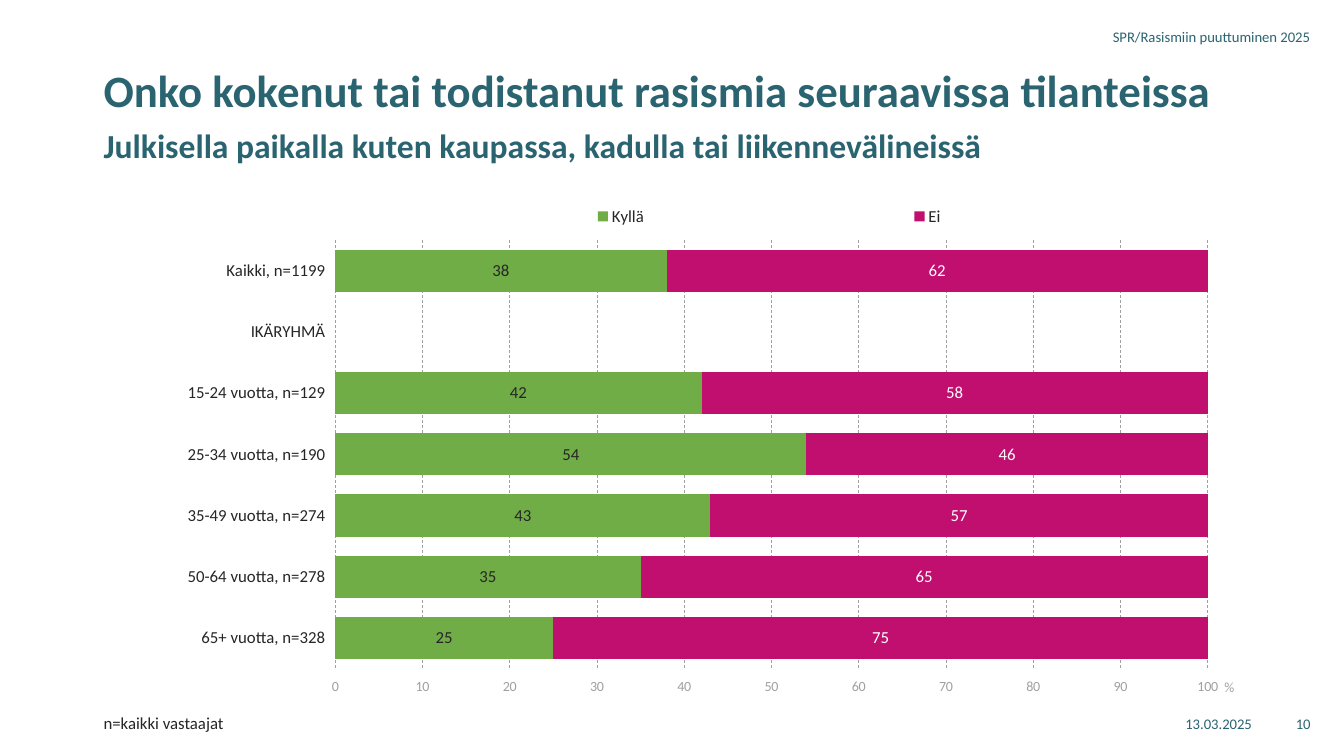
from lxml import etree
from pptx import Presentation
from pptx.chart.data import CategoryChartData
from pptx.dml.color import RGBColor
from pptx.enum.chart import (XL_CHART_TYPE, XL_LABEL_POSITION, XL_LEGEND_POSITION,
                             XL_TICK_LABEL_POSITION, XL_TICK_MARK)
from pptx.enum.dml import MSO_LINE
from pptx.enum.text import MSO_ANCHOR, PP_ALIGN
from pptx.oxml.ns import qn
from pptx.util import Cm, Pt

BAR_STACKED = XL_CHART_TYPE.BAR_STACKED
NO_TICKS = XL_TICK_MARK.NONE
LABELS_LOW, LABELS_HIGH = XL_TICK_LABEL_POSITION.LOW, XL_TICK_LABEL_POSITION.HIGH
LEGEND_TOP = XL_LEGEND_POSITION.TOP
LABEL_CENTER = XL_LABEL_POSITION.CENTER
DASH = MSO_LINE.DASH
TOP, MIDDLE = MSO_ANCHOR.TOP, MSO_ANCHOR.MIDDLE
LEFT, RIGHT = PP_ALIGN.LEFT, PP_ALIGN.RIGHT

FONT = "Calibri"
TEAL, DARK, GREY, WHITE = "2A6471", "262626", "A0A0A0", "FFFFFF"
MARGIN, CONTENT_WIDTH = 2.36, 29.13
FOOTER_TOP, SMALL_HEIGHT = 17.73, 1.02

CATEGORIES = ["Kaikki, n=1199", "IKÄRYHMÄ", "15-24 vuotta, n=129", "25-34 vuotta, n=190",
              "35-49 vuotta, n=274", "50-64 vuotta, n=278", "65+ vuotta, n=328"]
# name, values, bar colour, label colour
SERIES = [("Kyllä", [38, None, 42, 54, 43, 35, 25], "70AD47", DARK),
          ("Ei", [62, None, 58, 46, 57, 65, 75], "C10F70", WHITE)]


def color(hex_string):
    return RGBColor.from_string(hex_string)


def style_font(font, size, hex_color, bold=False):
    font.name = FONT
    font.size = Pt(size)
    font.bold = bold
    font.color.rgb = color(hex_color)


def add_text(slide, box, text, size, hex_color, align=LEFT, anchor=MIDDLE, bold=False):
    """Add a one-paragraph text box and return its paragraph."""
    frame = slide.shapes.add_textbox(*(Cm(length) for length in box)).text_frame
    frame.word_wrap = True
    frame.vertical_anchor = anchor
    paragraph = frame.paragraphs[0]
    paragraph.alignment = align
    paragraph.add_run().text = text
    style_font(paragraph.font, size, hex_color, bold)
    return paragraph


def add_heading(slide, box, title, subtitle):
    paragraph = add_text(slide, box, title, 32, TEAL, anchor=TOP, bold=True)
    paragraph.line_spacing = Pt(35)
    paragraph.add_line_break()
    run = paragraph.add_run()
    run.text = subtitle
    run.font.size = Pt(24)


def place_part(part, index, **settings):
    """Give a chart part a manual layout, as fractions of the chart."""
    for old_layout in part.findall(qn("c:layout")):
        part.remove(old_layout)
    layout = etree.Element(qn("c:layout"))
    manual = etree.SubElement(layout, qn("c:manualLayout"))
    for name, value in settings.items():
        etree.SubElement(manual, qn(f"c:{name}")).set("val", str(value))
    part.insert(index, layout)


def style_axes(chart):
    """Style both axes; the reversed categories put the high end at the bottom."""
    category_axis, value_axis = chart.category_axis, chart.value_axis
    for axis, size, hex_color, label_position in ((category_axis, 12, DARK, LABELS_LOW),
                                                  (value_axis, 10, GREY, LABELS_HIGH)):
        axis.major_tick_mark = axis.minor_tick_mark = NO_TICKS
        axis.tick_label_position = label_position
        axis.format.line.fill.background()
        style_font(axis.tick_labels.font, size, hex_color)
    category_axis.reverse_order = True

    value_axis.minimum_scale, value_axis.maximum_scale = 0, 100.01
    value_axis.major_unit = 10
    value_axis.tick_labels.number_format = "General"
    value_axis.tick_labels.number_format_is_linked = False
    grid_line = value_axis.major_gridlines.format.line
    grid_line.color.rgb = color(GREY)
    grid_line.width = Pt(0.5)
    grid_line.dash_style = DASH
    unit = value_axis.axis_title.text_frame.paragraphs[0]
    unit.add_run().text = "%"
    style_font(unit.runs[0].font, 10, GREY)


def add_answer_chart(slide, box):
    data = CategoryChartData()
    data.categories = CATEGORIES
    for name, values, _, _ in SERIES:
        data.add_series(name, values)
    chart = slide.shapes.add_chart(BAR_STACKED, *(Cm(length) for length in box), data).chart
    style_font(chart.font, 12, "3A4A4E")
    chart.has_title = False
    style_axes(chart)

    chart.has_legend = True
    chart.legend.position = LEGEND_TOP
    chart.legend.include_in_layout = False
    style_font(chart.legend.font, 12, DARK)

    plot = chart.plots[0]
    plot.gap_width, plot.overlap = 45, 100
    plot.vary_by_categories = False
    for series, (_, _, bar_color, label_color) in zip(plot.series, SERIES):
        series.format.fill.solid()
        series.format.fill.fore_color.rgb = color(bar_color)
        labels = series.data_labels
        labels.show_value = True
        labels.position = LABEL_CENTER
        labels.number_format = "#,##0"
        labels.number_format_is_linked = False
        style_font(labels.font, 12, label_color)

    root = chart.element
    place_part(root.find(".//" + qn("c:plotArea")), 0, layoutTarget="inner",
               xMode="edge", yMode="edge", x=0.209, y=0.126, w=0.755, h=0.808)
    place_part(root.find(".//" + qn("c:legend")), 1,
               xMode="edge", yMode="edge", x=0.207, y=0.046, w=0.755, h=0.07)
    place_part(root.find(".//" + qn("c:valAx")).find(qn("c:title")), 1,
               xMode="edge", yMode="edge", x=0.976, y=0.947)


def add_page_details(slide):
    for left, top, width, text in ((21.84, 0.42, 11.43, "SPR/Rasismiin puuttuminen 2025"),
                                   (24.18, FOOTER_TOP, 7.62, "13.03.2025"),
                                   (32.16, FOOTER_TOP, 1.12, "10")):
        add_text(slide, (left, top, width, SMALL_HEIGHT), text, 10.5, TEAL, RIGHT)
    note = add_text(slide, (MARGIN, 17.88, 23.32, 0.71), "n=kaikki vastaajat", 12, DARK, anchor=TOP)
    note.line_spacing = 0.9


def main():
    presentation = Presentation()
    presentation.slide_width, presentation.slide_height = Cm(33.87), Cm(19.05)
    slide = presentation.slides.add_slide(presentation.slide_layouts[6])
    add_answer_chart(slide, (MARGIN, 4.37, CONTENT_WIDTH, 13.36))
    add_page_details(slide)
    add_heading(slide, (MARGIN, 1.57, CONTENT_WIDTH, 2.67),
                "Onko kokenut tai todistanut rasismia seuraavissa tilanteissa",
                "Julkisella paikalla kuten kaupassa, kadulla tai liikennevälineissä")
    presentation.save("out.pptx")


if __name__ == "__main__":
    main()
